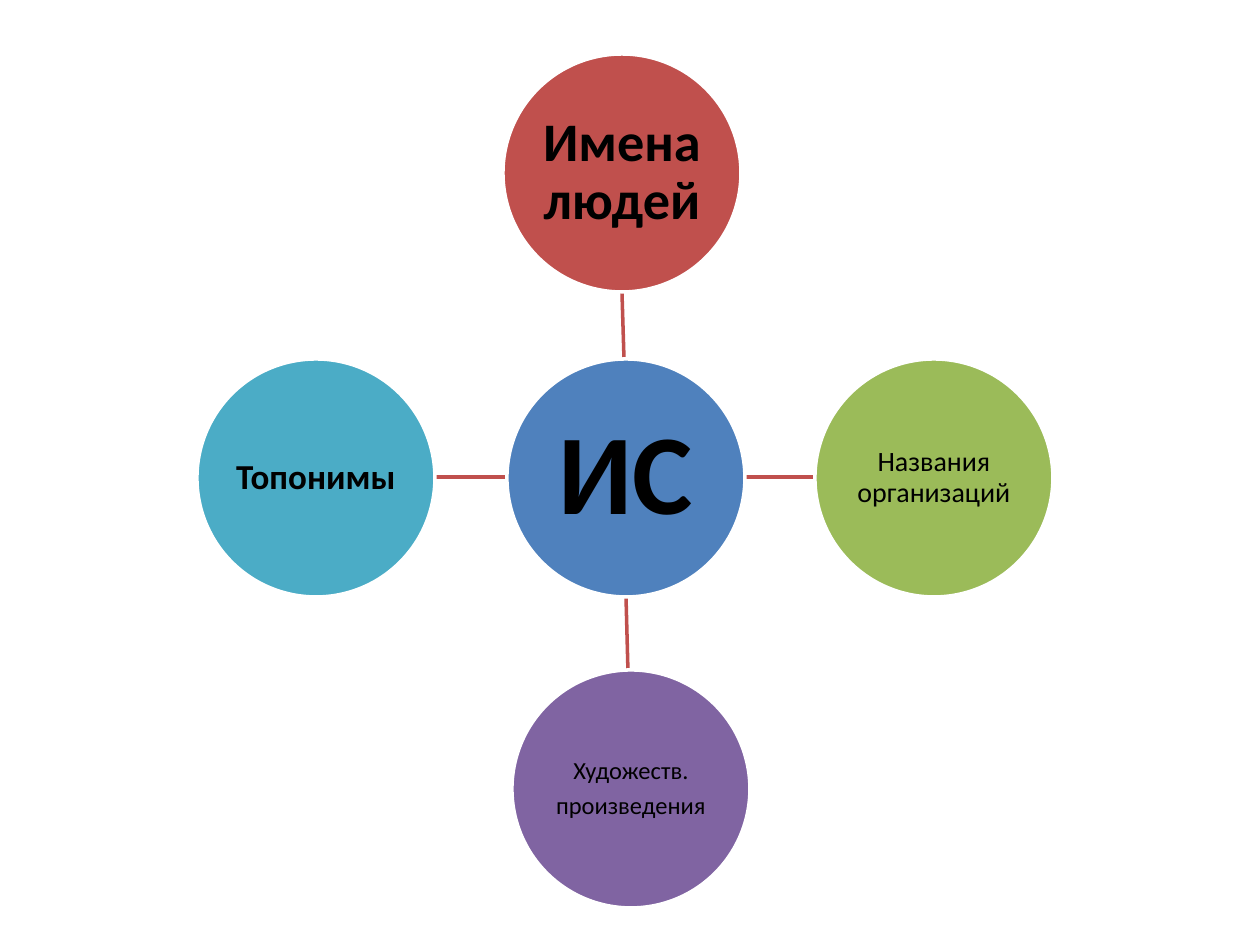
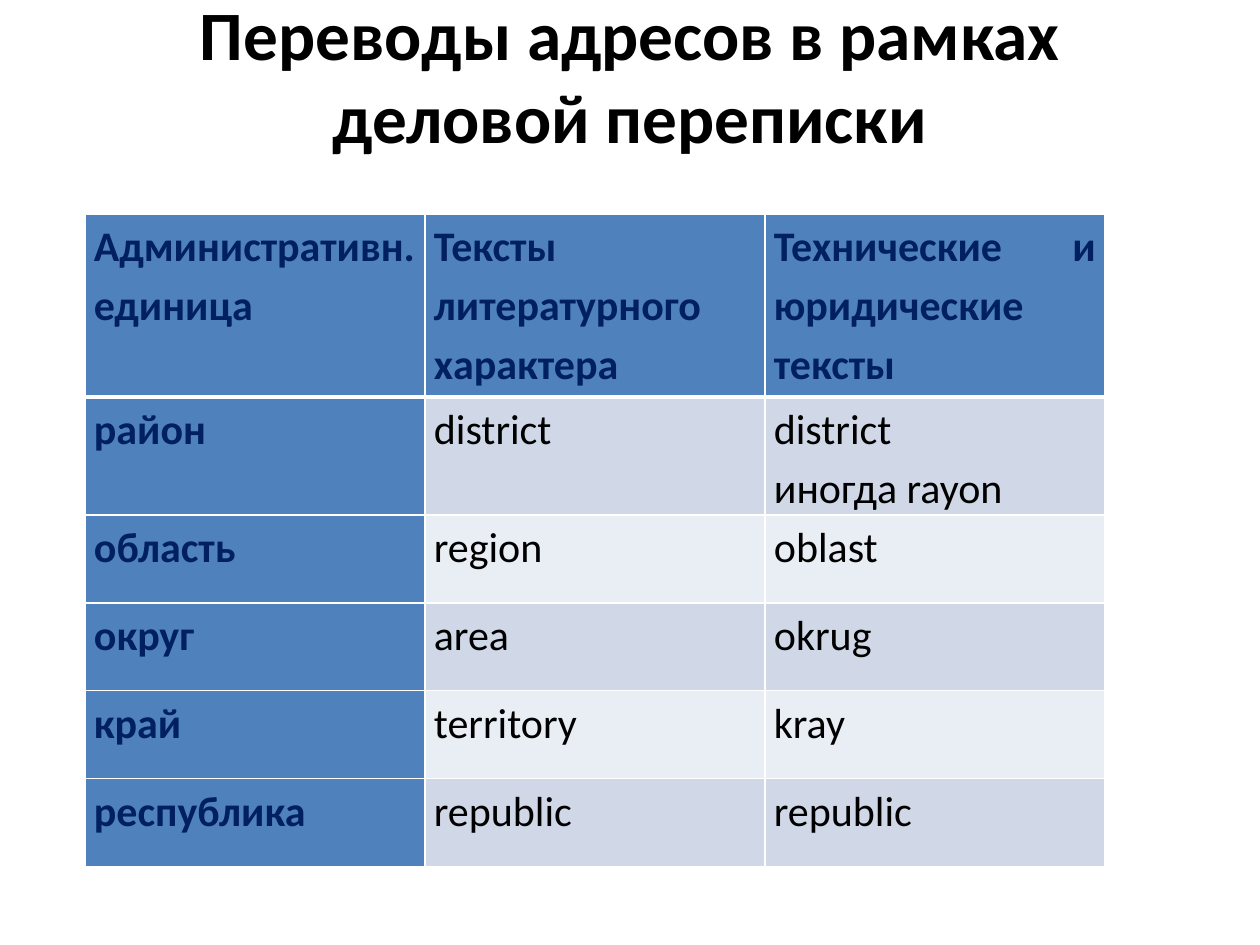
from lxml import etree
from pptx import Presentation
from pptx import util as u
from pptx.dml.color import RGBColor
from pptx.enum import shapes, text
from pptx.oxml import ns

PX = 914400 / 126
FONT = "Calibri"
BLACK = RGBColor(0, 0, 0)
WHITE = RGBColor(255, 255, 255)
NAVY = RGBColor(0x00, 0x20, 0x60)
BLUE = RGBColor(0x4F, 0x81, 0xBD)
RED = RGBColor(0xC0, 0x50, 0x4D)
GREEN = RGBColor(0x9B, 0xBB, 0x59)
VIOLET = RGBColor(0x80, 0x64, 0xA2)
TEAL = RGBColor(0x4B, 0xAC, 0xC6)
BAND = RGBColor(0xD0, 0xD8, 0xE8)
PALE = RGBColor(0xE9, 0xED, 0xF4)

SIZE = 238
HUB = ("ИС", 507, 359, BLUE, 65, True, 6)
RING = [
    ("Имена людей", 503, 54, RED, 31, True, 2),
    ("Названия организаций", 815, 359, GREEN, 16, False, 1),
    ("Художеств.\nпроизведения", 512, 670, VIOLET, 14, False, 1),
    ("Топонимы", 197, 359, TEAL, 20, True, 1),
]
LINKS = [
    (624, 359, 622, 292),
    (744, 477, 815, 477),
    (626, 596, 628, 671),
    (507, 477, 435, 477),
]
TITLE = "Переводы адресов в рамках деловой переписки"
UNITS = [
    ("Административн. единица", "Тексты литературного характера",
     "Технические и юридические тексты"),
    ("район", "district", "district\nиногда rayon"),
    ("область", "region", "oblast"),
    ("округ", "area", "okrug"),
    ("край", "territory", "kray"),
    ("республика", "republic", "republic"),
]
WIDE = 340
HIGH = [183, 117] + [88] * 4


def px(n):
    """Turn pixels into EMU."""
    return u.Emu(round(n * PX))


def put(obj, vals):
    """Set every attribute named in a dict."""
    for key, val in vals.items():
        setattr(obj, key, val)


def pad(obj, left, top, right, bottom):
    """Set the four inner margins in pixels."""
    sides = dict(left=left, top=top, right=right, bottom=bottom)
    put(obj, {f"margin_{side}": px(n) for side, n in sides.items()})


def write(frame, words, size, color, bold, para):
    """Fill a text frame and format all of its paragraphs."""
    frame.text = words
    for par in frame.paragraphs:
        put(par, para)
        put(par.font, dict(name=FONT, size=u.Pt(size), bold=bold))
        par.font.color.rgb = color


def disc(slide, words, left, top, fill, size, bold, inset):
    """Draw a labelled circle with a white rim."""
    oval = slide.shapes.add_shape(
        shapes.MSO_SHAPE.OVAL, px(left), px(top), px(SIZE), px(SIZE))
    oval.shadow.inherit = False
    oval.fill.solid()
    oval.fill.fore_color.rgb = fill
    oval.line.color.rgb = WHITE
    oval.line.width = u.Pt(2)
    frame = oval.text_frame
    put(frame, dict(word_wrap=True, vertical_anchor=text.MSO_ANCHOR.MIDDLE))
    pad(frame, inset, inset, inset, inset)
    write(frame, words, size, BLACK, bold,
          dict(alignment=text.PP_ALIGN.CENTER, line_spacing=0.9,
               space_after=u.Pt(round(size * 0.35))))


def link(slide, ends):
    """Draw a plain red line between two points."""
    line = slide.shapes.add_connector(
        shapes.MSO_CONNECTOR.STRAIGHT, *map(px, ends))
    line.line.color.rgb = RED
    line.line.width = u.Pt(2)
    etree.SubElement(line._element.spPr, ns.qn("a:effectLst"))


def head(slide, words):
    """Place and format the slide title."""
    title = slide.shapes.title
    put(title, dict(left=px(63), top=px(38), width=px(1134), height=px(157)))
    frame = title.text_frame
    put(frame, dict(word_wrap=True, auto_size=text.MSO_AUTO_SIZE.NONE,
                    vertical_anchor=text.MSO_ANCHOR.MIDDLE))
    pad(frame, 13, 6, 13, 90)
    write(frame, words, 39.6, BLACK, True,
          dict(alignment=text.PP_ALIGN.CENTER))


def edge(cell, low):
    """Give a cell white borders, the lower one of its own width."""
    props = cell._tc.get_or_add_tcPr()
    for side, wide in dict(L=1, R=1, T=1, B=low).items():
        line = etree.SubElement(
            props, ns.qn(f"a:ln{side}"), w=str(u.Pt(wide)))
        fill = etree.SubElement(line, ns.qn("a:solidFill"))
        etree.SubElement(fill, ns.qn("a:srgbClr"), val=str(WHITE))


def grid(slide, rows, left, top):
    """Draw a banded table with a marked first row and column."""
    cols = len(rows[0])
    table = slide.shapes.add_table(
        len(rows), cols, px(left), px(top),
        px(WIDE * cols), px(sum(HIGH))).table
    for col in table.columns:
        col.width = px(WIDE)
    for row, high in zip(table.rows, HIGH):
        row.height = px(high)
    for r, row in enumerate(rows):
        for c, words in enumerate(row):
            cell = table.cell(r, c)
            key = r == 0 or c == 0
            edge(cell, 1 if r else 3)
            cell.fill.solid()
            cell.fill.fore_color.rgb = BLUE if key else (PALE, BAND)[r % 2]
            pad(cell, 9, 0, 9, 0)
            write(cell.text_frame, words, 24, NAVY if key else BLACK, key,
                  dict(alignment=text.PP_ALIGN.JUSTIFY, line_spacing=1.15))


def main():
    """Build both slides and save them."""
    deck = Presentation()
    put(deck, dict(slide_width=px(1260), slide_height=px(945)))
    names = deck.slides.add_slide(deck.slide_layouts[6])
    for ends in LINKS:
        link(names, ends)
    for spot in [HUB] + RING:
        disc(names, *spot)
    places = deck.slides.add_slide(deck.slide_layouts[5])
    head(places, TITLE)
    grid(places, UNITS, 85, 214)
    deck.save("out.pptx")


if __name__ == "__main__":
    main()
